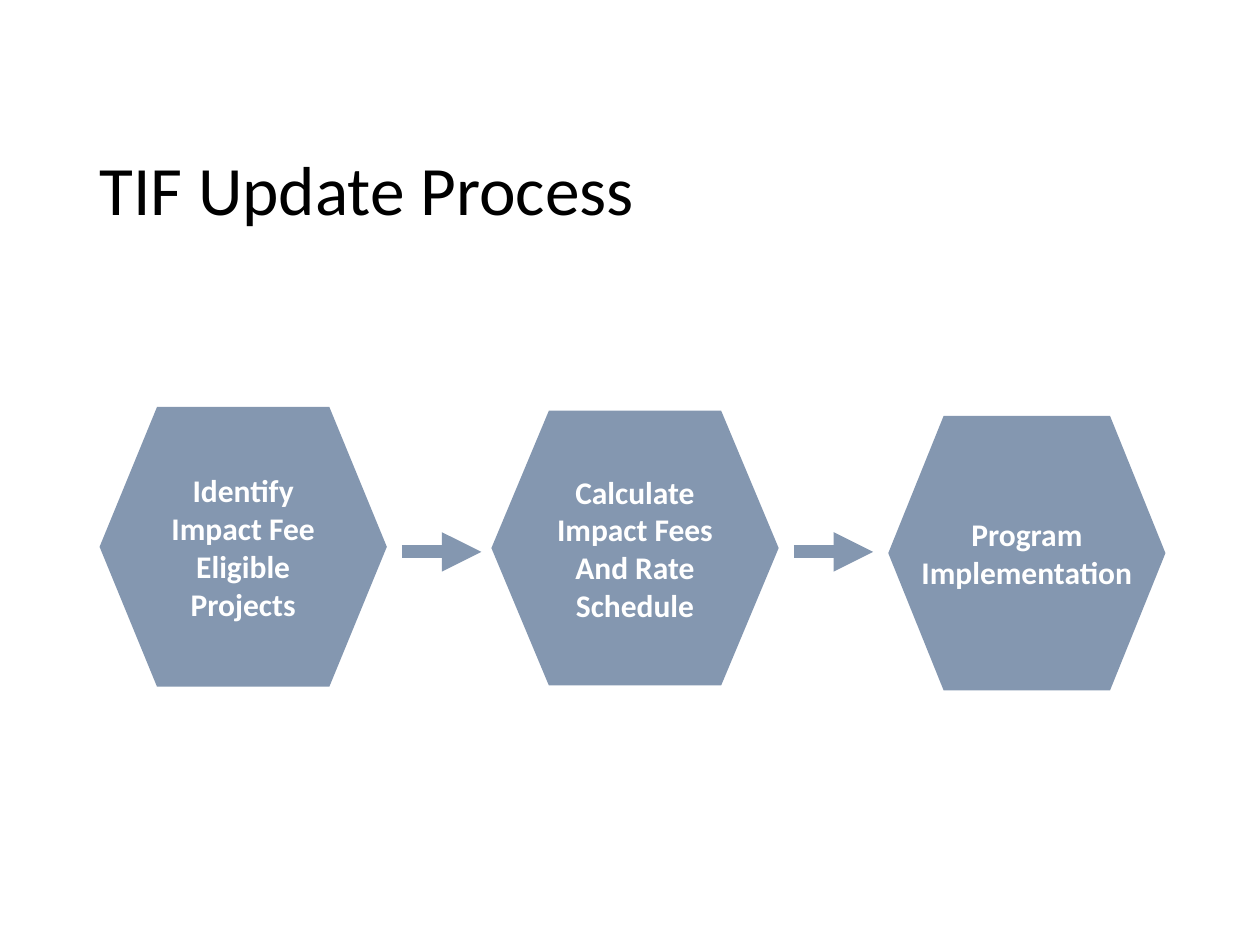
from lxml import etree
from pptx import Presentation
from pptx.dml.color import RGBColor
from pptx.enum.shapes import MSO_CONNECTOR, MSO_SHAPE
from pptx.enum.text import MSO_ANCHOR, PP_ALIGN
from pptx.oxml.ns import qn
from pptx.util import Inches, Pt

COLORS = {"step": "8497B0", "step_text": "FFFFFF", "title": "000000"}


def write_text(frame, text, size, color, bold=False, align=PP_ALIGN.LEFT,
               wrap=True, line_spacing=None):
    """Fill a text frame with one paragraph per line of text."""
    frame.word_wrap = wrap
    frame.vertical_anchor = MSO_ANCHOR.MIDDLE
    frame.text = text
    for paragraph in frame.paragraphs:
        paragraph.alignment = align
        paragraph.line_spacing = line_spacing
        font = paragraph.runs[0].font
        font.name = "Calibri"
        font.size = Pt(size)
        font.bold = bold
        font.color.rgb = RGBColor.from_string(COLORS[color])


prs = Presentation()
prs.slide_width, prs.slide_height = Inches(10), Inches(7.5)
slide = prs.slides.add_slide(prs.slide_layouts[5])

title = slide.shapes.title
title.left, title.top = Inches(0.69), Inches(1.22)
title.width, title.height = Inches(8.62), Inches(0.63)
write_text(title.text_frame, "TIF Update Process", size=39.6, color="title",
           line_spacing=0.9)

# Process steps: text, left, top, width, height
steps = [
    ("Identify\nImpact Fee\nEligible\nProjects", 0.79, 3.23, 2.28, 2.22),
    ("Calculate\nImpact Fees\nAnd Rate\nSchedule", 3.9, 3.26, 2.28, 2.18),
    ("Program\nImplementation", 7.05, 3.3, 2.2, 2.18),
]
for text, *box in steps:
    step = slide.shapes.add_shape(MSO_SHAPE.FLOWCHART_PREPARATION,
                                  *map(Inches, box))
    step.shadow.inherit = False
    step.fill.solid()
    step.fill.fore_color.rgb = RGBColor.from_string(COLORS["step"])
    step.line.fill.background()
    write_text(step.text_frame, text, size=18, color="step_text", bold=True,
               align=PP_ALIGN.CENTER, wrap=False)

# An arrow follows every step but the last
arrow_gap, arrow_length, arrow_y = 0.12, 0.63, Inches(4.38)
for _, left, _, width, _ in steps[:-1]:
    start = left + width + arrow_gap
    arrow = slide.shapes.add_connector(
        MSO_CONNECTOR.STRAIGHT, Inches(start), arrow_y,
        Inches(start + arrow_length), arrow_y)
    arrow.line.width = Pt(7.5)
    arrow.line.color.rgb = RGBColor.from_string(COLORS["step"])
    etree.SubElement(arrow.line._get_or_add_ln(), qn("a:tailEnd"), type="triangle")
    etree.SubElement(arrow._element.spPr, qn("a:effectLst"))

prs.save("out.pptx")
